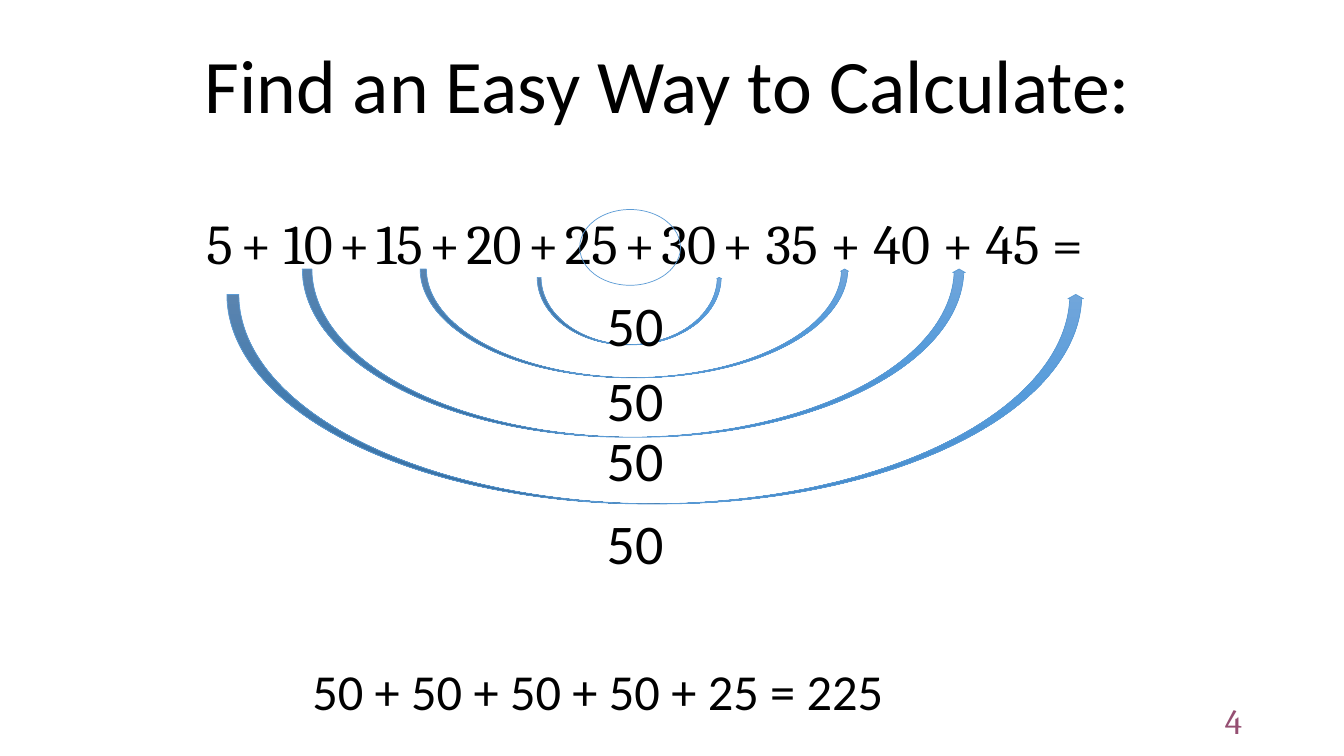
"""Build a slide that pairs addends into fifties to find a sum easily."""
import copy

import pptx
import pptx.dml.color
import pptx.enum.shapes
import pptx.enum.text
import pptx.oxml.ns
import pptx.util
from pptx.util import Cm

BLACK = pptx.dml.color.RGBColor(0x00, 0x00, 0x00)
PLUM = pptx.dml.color.RGBColor(0x95, 0x4F, 0x72)
OUTLINE_BLUE = pptx.dml.color.RGBColor(0x5B, 0x9B, 0xD5)
ARROW_BLUES = [
    pptx.dml.color.RGBColor(0x71, 0xA6, 0xDB),
    pptx.dml.color.RGBColor(0x55, 0x9B, 0xDB),
    pptx.dml.color.RGBColor(0x44, 0x8A, 0xCA),
]
ARROW_SHAPE = (0.057, 0.075, 0.021)
PAIR_ARCS = [
    (5.72, 7.42, 21.59, 5.28, 12.7),
    (7.62, 6.78, 16.71, 4.24, 10.59),
    (10.59, 6.78, 10.8, 2.74, 9.09),
    (13.54, 6.99, 4.65, 1.7, 7.19),
]
EQUATION_PARTS = ["5", "+ 10", "+", "15", "+", "20", "+", "25", "+", "30",
                  "+ 35 + 40 + 45 ="]


def format_run(run, size, font, color=BLACK):
    """Set the size, typeface and colour of a run."""
    run.font.size = pptx.util.Pt(size)
    run.font.name = font
    run.font.color.rgb = color


def place(shape, left, top, width, height):
    """Move and size a shape, in centimetres."""
    shape.left, shape.top = Cm(left), Cm(top)
    shape.width, shape.height = Cm(width), Cm(height)


def fit_frame(frame):
    """Keep text on one line in a frame that grows with it."""
    frame.word_wrap = False
    frame.auto_size = pptx.enum.text.MSO_AUTO_SIZE.SHAPE_TO_FIT_TEXT
    frame.vertical_anchor = pptx.enum.text.MSO_ANCHOR.TOP


def add_title(slide, text):
    """Fill and format the title placeholder."""
    title = slide.shapes.title
    place(title, 4.9, 0.84, 24.74, 2.57)
    title.text_frame.text = text
    fit_frame(title.text_frame)
    paragraph = title.text_frame.paragraphs[0]
    paragraph.alignment = pptx.enum.text.PP_ALIGN.LEFT
    paragraph.line_spacing = 1.0
    format_run(paragraph.runs[0], 54, "Calibri")


def add_label(shapes, text, box, size, font="Calibri", color=BLACK):
    """Add a one-line text box and return its frame."""
    frame = shapes.add_textbox(*map(Cm, box)).text_frame
    frame.text = text
    fit_frame(frame)
    format_run(frame.paragraphs[0].runs[0], size, font, color)
    return frame


def add_equation(slide):
    """Add the long sum, with narrow gaps between its parts."""
    first, *rest = EQUATION_PARTS
    frame = add_label(slide.shapes, first, (4.95, 5.12, 24.89, 1.97), 40, "Cambria")
    for index, part in enumerate(rest):
        for text, size in ((" ", 20 if index else 24), (part, 40)):
            run = frame.paragraphs[0].add_run()
            run.text = text
            format_run(run, size, "Cambria")


def add_outlined(shapes, kind, box):
    """Add a preset shape with a thin blue outline."""
    shape = shapes.add_shape(kind, *map(Cm, box))
    shape.shadow.inherit = False
    shape.line.color.rgb = OUTLINE_BLUE
    shape.line.width = pptx.util.Pt(0.5)
    return shape


def shade(shape, colors):
    """Fill a shape with an even gradient running from top to bottom."""
    shape.fill.gradient()
    shape.fill.gradient_angle = 270
    stops = shape.element.spPr.find(".//" + pptx.oxml.ns.qn("a:gsLst"))
    stops.insert(1, copy.deepcopy(stops[0]))
    for index, (stop, color) in enumerate(zip(shape.fill.gradient_stops, colors)):
        stop.position = index / (len(colors) - 1)
        stop.color.rgb = color


def add_pair(slide, left, top, width, height, label_top):
    """Group an arc joining two addends with the sum of the pair."""
    pair = slide.shapes.add_group_shape().shapes
    arc = add_outlined(pair, pptx.enum.shapes.MSO_SHAPE.CURVED_UP_ARROW,
                       (left, top, width, height))
    for index, value in enumerate(ARROW_SHAPE):
        arc.adjustments[index] = value
    shade(arc, ARROW_BLUES)
    add_label(pair, "50", (15.04, label_top, 1.93, 1.96), 40)


def add_page_number(slide):
    """Add the page number at the lower right."""
    frame = add_label(slide.shapes, "4", (23.93, 17.65, 7.62, 1.02), 25, "Cambria", PLUM)
    frame.word_wrap = True
    frame.auto_size = pptx.enum.text.MSO_AUTO_SIZE.NONE
    frame.vertical_anchor = pptx.enum.text.MSO_ANCHOR.MIDDLE
    frame.paragraphs[0].alignment = pptx.enum.text.PP_ALIGN.RIGHT


def main():
    """Build and save the slide."""
    deck = pptx.Presentation()
    deck.slide_width, deck.slide_height = Cm(33.87), Cm(19.05)
    slide = deck.slides.add_slide(deck.slide_layouts[5])
    add_page_number(slide)
    add_equation(slide)
    add_title(slide, "Find an Easy Way to Calculate:")
    for arc in PAIR_ARCS:
        add_pair(slide, *arc)
    middle_ring = add_outlined(slide.shapes, pptx.enum.shapes.MSO_SHAPE.OVAL,
                               (14.61, 5.28, 2.54, 1.91))
    middle_ring.fill.background()
    add_label(slide.shapes, "50 + 50 + 50 + 50 + 25 = 225", (7.62, 16.51, 15.04, 1.8), 36)
    deck.save("out.pptx")


if __name__ == "__main__":
    main()
